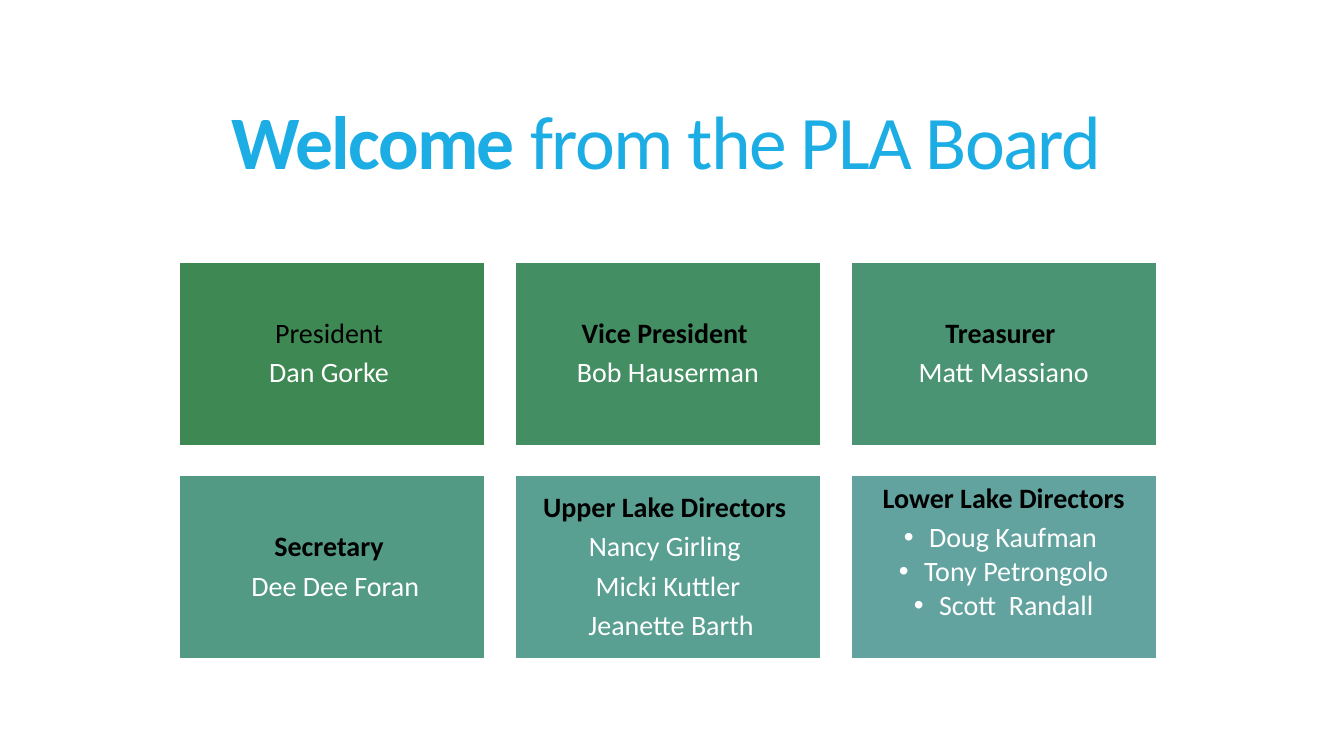
from dataclasses import dataclass

from lxml.etree import SubElement
from pptx import Presentation
from pptx.dml.color import RGBColor
from pptx.enum.shapes import MSO_SHAPE as Shape
from pptx.enum.text import MSO_ANCHOR as Anchor, MSO_AUTO_SIZE as Fit, PP_ALIGN as Align
from pptx.oxml.ns import qn
from pptx.slide import Slide
from pptx.util import Pt

FONT = "Calibri"
BLUE = RGBColor(0x1C, 0xAD, 0xE4)
BLACK = RGBColor(0x00, 0x00, 0x00)
WHITE = RGBColor(0xFF, 0xFF, 0xFF)

# Card grid, in points
COLS = 3
LEFT, TOP = 128.2, 187.2
WIDTH, HEIGHT = 218.2, 131
STEP_X, STEP_Y = 239.8, 152.6
INSET = 6


@dataclass
class Card:
    role: str
    names: list[str]
    fill: RGBColor
    bold: bool = True
    listed: bool = False


CARDS = [
    Card("President ", ["Dan Gorke "], RGBColor(0x3E, 0x88, 0x53), bold=False),
    Card("Vice President ", ["Bob Hauserman"], RGBColor(0x44, 0x8E, 0x63)),
    Card("Treasurer ", ["Matt Massiano"], RGBColor(0x4B, 0x94, 0x73)),
    Card("Secretary ", [" Dee Dee Foran"], RGBColor(0x52, 0x9A, 0x83)),
    Card("Upper Lake Directors ",
         ["Nancy Girling ", "Micki Kuttler", " Jeanette Barth"],
         RGBColor(0x59, 0x9F, 0x92)),
    Card("Lower Lake Directors",
         ["Doug Kaufman ", "Tony Petrongolo", "Scott  Randall"],
         RGBColor(0x62, 0xA3, 0x9F), listed=True),
]


def add_run(para, text: str, size: float, color: RGBColor, bold: bool):
    run = para.add_run()
    run.text = text
    font = run.font
    font.name, font.size, font.bold = FONT, Pt(size), bold
    font.color.rgb = color
    return run


def add_bullet(para) -> None:
    props = para._p.get_or_add_pPr()
    props.set("marL", str(Pt(18)))
    props.set("indent", str(Pt(-18)))
    SubElement(props, qn("a:buFont")).set("typeface", "Arial")
    SubElement(props, qn("a:buChar")).set("char", "•")


def add_title(slide: Slide) -> None:
    title = slide.shapes.title
    title.left, title.top = Pt(51.8), Pt(39.6)
    title.width, title.height = Pt(848.2), Pt(130.3)
    frame = title.text_frame
    frame.word_wrap, frame.auto_size = True, Fit.NONE
    frame.vertical_anchor = Anchor.MIDDLE
    para = frame.paragraphs[0]
    para.alignment, para.line_spacing = Align.CENTER, 0.85
    for text, bold in (("Welcome", True), (" from the PLA Board", False)):
        run = add_run(para, text, 54, BLUE, bold)
        run._r.get_or_add_rPr().set("spc", "-120")


def add_card(slide: Slide, card: Card, left: float, top: float) -> None:
    box = slide.shapes.add_shape(
        Shape.RECTANGLE, Pt(left), Pt(top), Pt(WIDTH), Pt(HEIGHT))
    box.shadow.inherit = False
    box.fill.solid()
    box.fill.fore_color.rgb = card.fill
    box.line.color.rgb = WHITE
    box.line.width = Pt(1)

    frame = box.text_frame
    frame.word_wrap = True
    frame.vertical_anchor = Anchor.TOP if card.listed else Anchor.MIDDLE
    frame.margin_left = frame.margin_right = Pt(INSET)
    frame.margin_top = frame.margin_bottom = Pt(INSET)

    # Role first, then one paragraph per name
    for i, text in enumerate([card.role, *card.names]):
        head = i == 0
        para = frame.paragraphs[0] if head else frame.add_paragraph()
        bullet = card.listed and not head
        para.alignment, para.line_spacing = Align.CENTER, 0.9
        para.space_after = Pt(2.7 if bullet else 6.6)
        if bullet:
            para.level = 1
            add_bullet(para)
        add_run(para, text, 20, BLACK if head else WHITE, head and card.bold)


def main() -> None:
    deck = Presentation()
    deck.slide_width, deck.slide_height = Pt(960), Pt(540)
    slide = deck.slides.add_slide(deck.slide_layouts[5])
    add_title(slide)
    for i, card in enumerate(CARDS):
        row, col = divmod(i, COLS)
        add_card(slide, card, LEFT + col * STEP_X, TOP + row * STEP_Y)
    deck.save("out.pptx")


if __name__ == "__main__":
    main()
